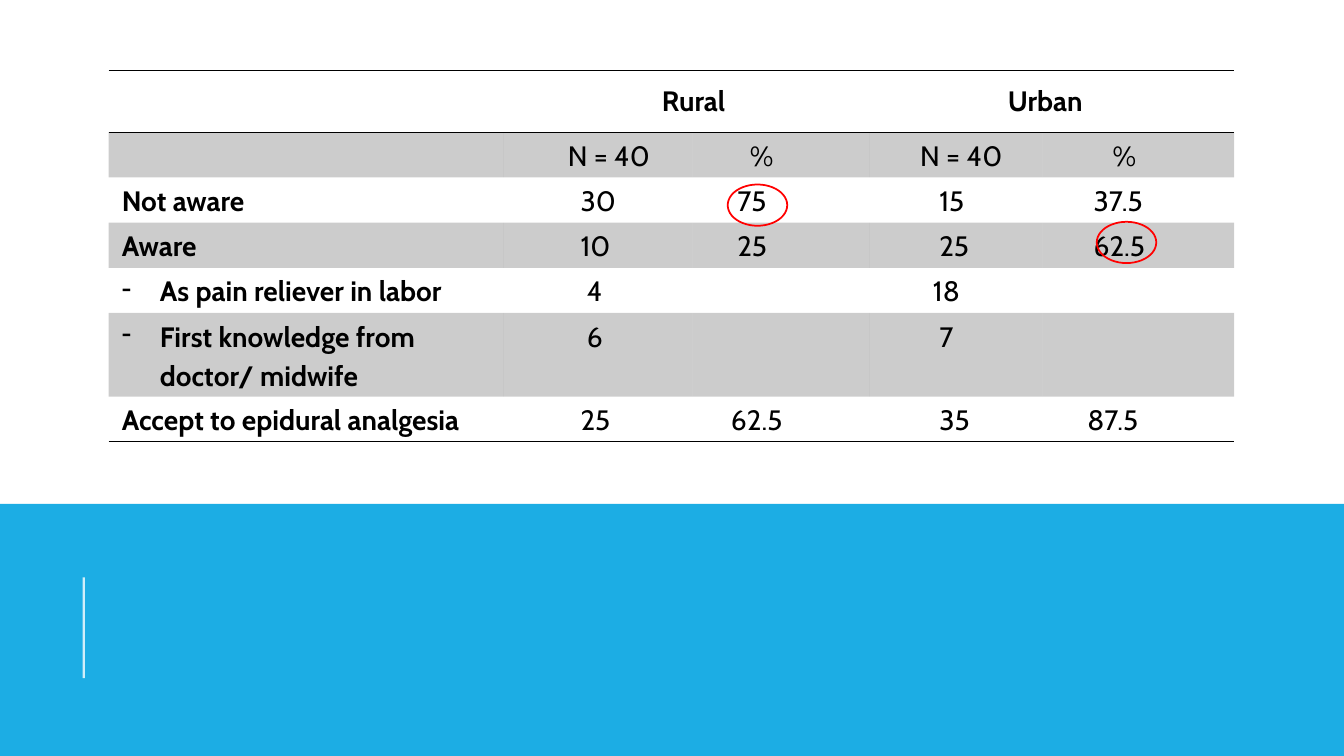
from lxml.etree import SubElement
from pptx import Presentation
from pptx.dml.color import RGBColor
from pptx.enum.shapes import MSO_CONNECTOR, MSO_SHAPE
from pptx.enum.text import PP_ALIGN
from pptx.oxml import parse_xml
from pptx.oxml.ns import nsdecls, qn
from pptx.util import Cm, Pt

BLACK, WHITE, BLUE, RED = "000000", "FFFFFF", "1CADE4", "FF0000"
NO_TABLE_STYLE = "{2D5ABB26-0587-4C30-8999-92F81FD0307C}"
INDENT_STEP = 0.16
HANGING_INDENT = 0.96

COLUMN_WIDTHS = [9.96, 4.75, 4.45, 4.37, 4.83]
ROW_HEIGHTS = [1.55, 1.14, 1.14, 1.14, 1.14, 2.11, 1.14]
SUBTOPICS = ["As pain reliever in labor", "First knowledge from doctor/ midwife"]
AWARENESS_ROWS = [
    ["", ("Rural", 22), "", ("Urban", 19), ""],
    ["", ("N = 40", 8), ("%", 7), ("N = 40", 6), ("%", 9)],
    [("Not aware", 0), ("30", 10), ("75", 5), ("15", 9), ("37.5", 6)],
    [("Aware", 0), ("10", 10), ("25", 5), ("25", 9), ("62.5", 6)],
    [(SUBTOPICS[0], 0), ("4", 11), "", ("18", 8), ""],
    [(SUBTOPICS[1], 0), ("6", 11), "", ("7", 9), ""],
    [("Accept to epidural analgesia", 0), ("25", 10), ("62.5", 4), ("35", 9), ("87.5", 5)],
]


def color(hex_string):
    return RGBColor.from_string(hex_string)


def set_opacity(element, percent):
    for tint in element.iter(qn("a:srgbClr")):
        SubElement(tint, qn("a:alpha"), val=str(percent * 1000))


def write_text(frame, text, bold=False, indent=0, bullet=None, size=20, font="Cabin", hex_color=BLACK):
    frame.word_wrap = True
    paragraph = frame.paragraphs[0]
    paragraph.alignment = PP_ALIGN.LEFT
    paragraph.line_spacing = 1.15
    run = paragraph.add_run()
    run.text = text
    run.font.size, run.font.name, run.font.bold = Pt(size), font, bold
    run.font.color.rgb = color(hex_color)
    properties = paragraph._p.get_or_add_pPr()
    properties.set("marL", str(Cm(HANGING_INDENT if bullet else indent)))
    properties.set("indent", str(-Cm(HANGING_INDENT) if bullet else 0))
    if bullet:
        SubElement(properties, qn("a:buChar"), char=bullet)


def add_border(cell, side):
    cell._tc.get_or_add_tcPr().insert(0, parse_xml(
        f'<a:{side} {nsdecls("a")} w="{Pt(1)}"><a:solidFill><a:srgbClr val="{BLACK}"/>'
        f'</a:solidFill><a:prstDash val="solid"/></a:{side}>'))


def fill_cell(cell, row, column, entry):
    header = row == 0
    side_margin, top_margin = (0.46, 0.23) if header else (0.33, 0.05)
    cell.margin_left = cell.margin_right = Cm(side_margin)
    cell.margin_top = Cm(top_margin)
    cell.margin_bottom = Cm(0.23 if header else 0)
    if row % 2:
        cell.fill.solid()
        cell.fill.fore_color.rgb = color(BLACK)
        set_opacity(cell._tc.tcPr, 20)
    else:
        cell.fill.background()
    if row in (0, len(ROW_HEIGHTS) - 1):
        add_border(cell, "lnB")
    if header:
        add_border(cell, "lnT")
    if entry:
        text, steps = entry
        write_text(cell.text_frame, text, bold=header or column == 0,
                   indent=steps * INDENT_STEP, bullet="-" if text in SUBTOPICS else None)


def add_awareness_table(slide, left, top):
    frame = slide.shapes.add_table(len(ROW_HEIGHTS), len(COLUMN_WIDTHS), Cm(left), Cm(top),
                                   Cm(sum(COLUMN_WIDTHS)), Cm(sum(ROW_HEIGHTS)))
    table = frame.table
    table.first_row = table.horz_banding = False
    table._tbl.tblPr.find(qn("a:tableStyleId")).text = NO_TABLE_STYLE
    for column, width in zip(table.columns, COLUMN_WIDTHS):
        column.width = Cm(width)
    for row, height in zip(table.rows, ROW_HEIGHTS):
        row.height = Cm(height)
    for first in (1, 3):
        table.cell(0, first).merge(table.cell(0, first + 1))
    for row, entries in enumerate(AWARENESS_ROWS):
        for column, entry in enumerate(entries):
            fill_cell(table.cell(row, column), row, column, entry)


def add_title_band(slide, left, top, width, height):
    band = slide.shapes.add_shape(MSO_SHAPE.RECTANGLE, Cm(left), Cm(top), Cm(width), Cm(height))
    band.shadow.inherit = False
    band.fill.solid()
    band.fill.fore_color.rgb = color(BLUE)
    band.line.fill.background()
    rule_x = Cm(left + 2.11)
    rule = slide.shapes.add_connector(MSO_CONNECTOR.STRAIGHT, rule_x, Cm(top + 4.39),
                                      rule_x, Cm(top + 1.85))
    rule.line.color.rgb = color(WHITE)
    rule.line.width = Pt(1.5)
    set_opacity(rule._element.spPr, 80)
    SubElement(rule._element.spPr, qn("a:effectLst"))


def add_highlight(slide, left, top, width=1.5, height=1.04):
    ring = slide.shapes.add_shape(MSO_SHAPE.OVAL, Cm(left), Cm(top), Cm(width), Cm(height))
    ring.shadow.inherit = False
    ring.fill.background()
    ring.line.color.rgb = color(RED)
    ring.line.width = Pt(1.25)


def main():
    presentation = Presentation()
    presentation.slide_width, presentation.slide_height = Cm(33.87), Cm(19.05)
    slide = presentation.slides.add_slide(presentation.slide_layouts[6])
    add_title_band(slide, 0, 12.7, 33.87, 6.35)
    add_awareness_table(slide, 2.74, 1.78)
    add_highlight(slide, 18.34, 4.65)
    add_highlight(slide, 27.64, 5.59)
    presentation.save("out.pptx")


if __name__ == "__main__":
    main()
